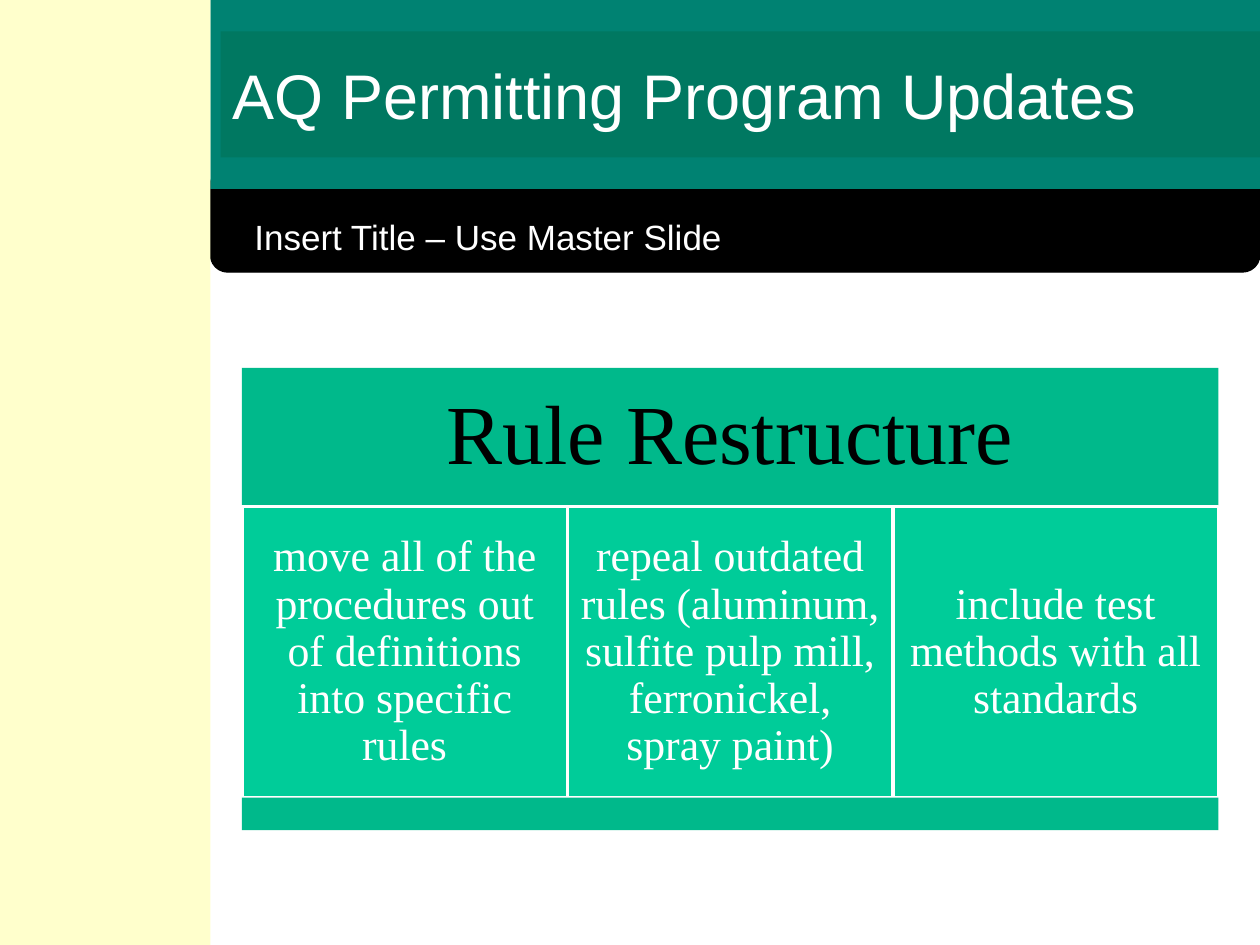
from pptx import Presentation
from pptx.dml.color import RGBColor
from pptx.enum.shapes import MSO_SHAPE as Shape
from pptx.enum.text import MSO_ANCHOR as Anchor, PP_ALIGN as Align
from pptx.util import Inches, Pt


def color(value):
    return RGBColor.from_string(value)


def assign(target, values):
    for name, value in values.items():
        setattr(target, name, value)


class SlideBuilder:
    WHITE, BLACK = "FFFFFF", "000000"
    TEAL, DEEP_TEAL, CREAM = "008272", "007861", "FFFFCC"
    GREEN, LIGHT_GREEN = "00B98B", "00CC99"
    SANS, SERIF = "Arial", "Times New Roman"

    def __init__(self, page):
        self.page = page
        self.shapes = page.shapes

    def start_group(self):
        self.shapes = self.page.shapes.add_group_shape().shapes

    def panel(self, place, fill, line=None, width=0.75, kind=Shape.RECTANGLE):
        box = self.shapes.add_shape(kind, *map(Inches, place))
        box.shadow.inherit = False
        box.fill.solid()
        box.fill.fore_color.rgb = color(fill)
        if line:
            box.line.color.rgb = color(line)
            box.line.width = Pt(width)
        else:
            box.line.fill.background()
        return box

    def label(self, box, text, size, font, ink=WHITE, inset=(0.1, 0.05), **layout):
        frame = box.text_frame
        side, edge = map(Inches, inset)
        assign(frame, {"word_wrap": True, "vertical_anchor": Anchor.MIDDLE,
                       "margin_left": side, "margin_right": side,
                       "margin_top": edge, "margin_bottom": edge})
        para = frame.paragraphs[0]
        assign(para, {"alignment": Align.LEFT, **layout})
        span = para.add_run()
        span.text = text
        assign(span.font, {"name": font, "size": Pt(size)})
        span.font.color.rgb = color(ink)


def main():
    deck = Presentation()
    assign(deck, {"slide_width": Inches(10), "slide_height": Inches(7.5)})
    build = SlideBuilder(deck.slides.add_slide(deck.slide_layouts[6]))

    # Header bands and side strip
    side = 1.67
    build.panel((side, 1.33, 10 - side, 0.83), build.BLACK, build.BLACK,
                kind=Shape.ROUNDED_RECTANGLE)
    build.panel((side, 0, 10 - side, 1.5), build.TEAL)
    build.panel((0, 0, side, 7.5), build.CREAM)

    # Titles
    subtitle = build.panel((1.92, 1.67, 7.42, 0.42), build.BLACK)
    build.label(subtitle, "Insert Title – Use Master Slide", 20, build.SANS)
    title = build.panel((1.75, 0.25, 8.25, 1), build.DEEP_TEAL)
    build.label(title, "AQ Permitting Program Updates", 36, build.SANS)

    # Rule diagram: heading, three columns, closing bar
    build.start_group()
    left, width, top, middle, bottom = 1.92, 7.75, 2.92, 4.02, 6.33
    centred = {"alignment": Align.CENTER, "line_spacing": 0.9}
    heading = build.panel((left, top, width, middle - top), build.GREEN)
    build.label(heading, "Rule Restructure", 48, build.SERIF, build.BLACK,
                (0.2, 0.2), **centred)

    changes = [
        "move all of the procedures out of definitions into specific rules",
        "repeal outdated rules (aluminum, sulfite pulp mill, ferronickel, spray paint)",
        "include test methods with all standards",
    ]
    step = width / len(changes)
    for index, change in enumerate(changes):
        column = build.panel((left + index * step, middle, step, bottom - middle),
                             build.LIGHT_GREEN, build.WHITE, 2)
        build.label(column, change, 25, build.SERIF, inset=(0.1, 0.1), **centred)

    build.panel((left, bottom, width, 0.26), build.GREEN)

    deck.save("out.pptx")


if __name__ == "__main__":
    main()
